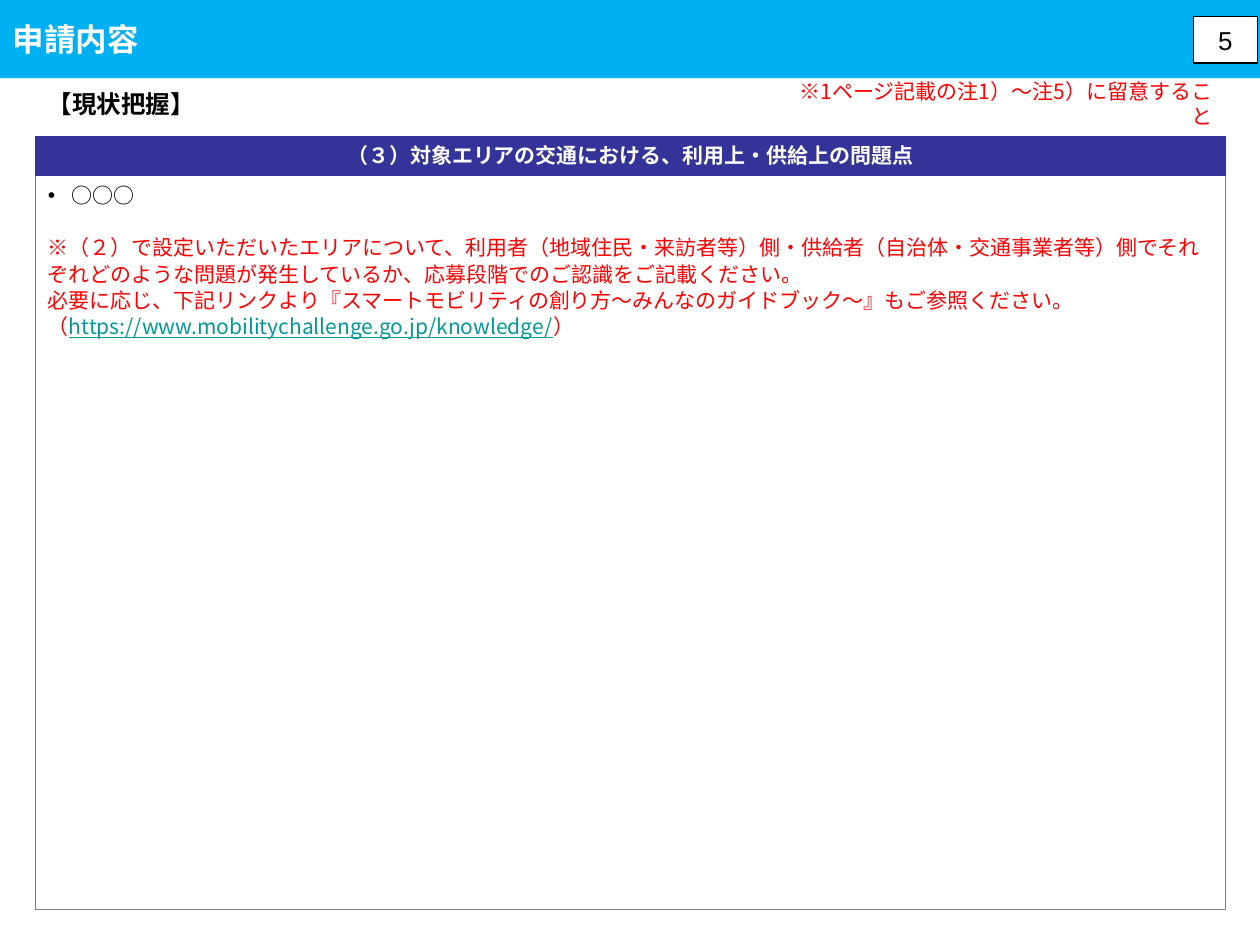
from lxml.etree import SubElement
from pptx import Presentation
from pptx.dml.color import RGBColor
from pptx.enum.shapes import MSO_SHAPE as Shape
from pptx.enum.text import MSO_ANCHOR as Anchor, MSO_AUTO_SIZE as AutoSize, PP_ALIGN as Align
from pptx.oxml.ns import qn
from pptx.util import Inches, Pt

JAPANESE = "Noto Sans CJK JP"
BLACK, WHITE, RED = "000000", "FFFFFF", "FF0000"
LINK = "009999"


def color(value):
    """Turn a hex string into a colour."""
    return RGBColor.from_string(value)


def place(shape, box):
    """Move a shape to a box of left, top, width and height in inches."""
    shape.left, shape.top, shape.width, shape.height = (Inches(v) for v in box)


def paint(shape, fill=None, line=None, width=0.5):
    """Set the fill and outline of a shape, leaving out what is not given."""
    if fill:
        shape.fill.solid()
        shape.fill.fore_color.rgb = color(fill)
    else:
        shape.fill.background()
    if line:
        shape.line.color.rgb = color(line)
        shape.line.width = Pt(width)
    else:
        shape.line.fill.background()


def style_span(span, size, hue, bold=False, face=JAPANESE):
    """Format one run, for Latin and East Asian letters alike."""
    font = span.font
    font.size, font.bold, font.name = Pt(size), bold, face
    font.color.rgb = color(hue)
    SubElement(span._r.get_or_add_rPr(), qn("a:ea")).set("typeface", face)


def set_text(shape, text, size, hue, align=Align.LEFT, anchor=Anchor.MIDDLE, **style):
    """Write a single formatted paragraph into a shape."""
    frame = shape.text_frame
    frame.text = text
    frame.word_wrap = True
    frame.auto_size = AutoSize.NONE
    frame.vertical_anchor = anchor
    para = frame.paragraphs[0]
    para.alignment = align
    style_span(para.runs[0], size, hue, **style)


def add_title(page, box):
    """Fill the title placeholder as the coloured bar at the top."""
    title = page.shapes.title
    place(title, box)
    paint(title, "00B0F0")
    set_text(title, "申請内容", 18, WHITE, bold=True)


def add_label(page, box, text, size, hue, **style):
    """Add a text box with one formatted paragraph."""
    label = page.shapes.add_textbox(*(Inches(v) for v in box))
    set_text(label, text, size, hue, **style)


def add_block(page, box, text, size, hue, fill, line, width, **style):
    """Add a rectangle with centred text."""
    block = page.shapes.add_shape(Shape.RECTANGLE, *(Inches(v) for v in box))
    block.shadow.inherit = False
    paint(block, fill, line, width)
    set_text(block, text, size, hue, align=Align.CENTER, **style)


def set_bullet(para, bullet):
    """Give a paragraph a hanging bullet, or none."""
    hang = Inches(0.19) if bullet else 0
    properties = para._p.get_or_add_pPr()
    properties.set("marL", str(hang))
    properties.set("indent", str(-hang))
    if bullet:
        SubElement(properties, qn("a:buFont")).set("typeface", "Arial")
        SubElement(properties, qn("a:buChar")).set("char", bullet)
    else:
        SubElement(properties, qn("a:buNone"))


def add_answer(page, box):
    """Fill the body placeholder with the answer and its guidance."""
    paragraphs = [
        ("•", 0, [("○○○", BLACK)]),
        (None, 15, [("※（２）で設定いただいたエリアについて、利用者（地域住民・来訪者等）側・"
                     "供給者（自治体・交通事業者等）側でそれぞれどのような問題が発生しているか、"
                     "応募段階でのご認識をご記載ください。", RED)]),
        (None, 0, [("必要に応じ、下記リンクより『スマートモビリティの創り方～みんなのガイドブック～』"
                    "もご参照ください。", RED)]),
        (None, 0, [("（", RED), ("https://www.mobilitychallenge.go.jp/knowledge/", LINK), ("）", RED)]),
    ]
    body = page.placeholders[1]
    place(body, box)
    paint(body, line="808080")
    frame = body.text_frame
    frame.word_wrap = True
    frame.auto_size = AutoSize.NONE
    frame.vertical_anchor = Anchor.TOP
    for index, (bullet, before, spans) in enumerate(paragraphs):
        para = frame.add_paragraph() if index else frame.paragraphs[0]
        set_bullet(para, bullet)
        para.line_spacing, para.space_before = Pt(15), Pt(before)
        para.alignment = Align.LEFT
        for text, hue in spans:
            span = para.add_run()
            span.text = text
            style_span(span, 12, hue)
            span.font.underline = hue == LINK


def main():
    """Build the slide and save it."""
    deck = Presentation()
    deck.slide_width, deck.slide_height = Inches(10), Inches(7.5)
    page = deck.slides.add_slide(deck.slide_layouts[1])
    left, width = 0.28, 9.45
    add_title(page, (0, 0, 10, 0.62))
    add_label(page, (left, 0.66, 3.56, 0.34), "【現状把握】", 14, BLACK, anchor=Anchor.TOP, bold=True)
    add_block(page, (left, 1.08, width, 0.31), "（３）対象エリアの交通における、利用上・供給上の問題点",
              12, WHITE, "333399", "333399", 0.5, bold=True)
    add_answer(page, (left, 1.39, width, 5.83))
    add_block(page, (9.47, 0.13, 0.51, 0.37), "5", 14.8, BLACK, WHITE, BLACK, 0.75, face="Arial")
    add_label(page, (6.22, 0.67, 3.5, 0.31), "※1ページ記載の注1）～注5）に留意すること", 12, RED, align=Align.RIGHT)
    deck.save("out.pptx")


if __name__ == "__main__":
    main()
